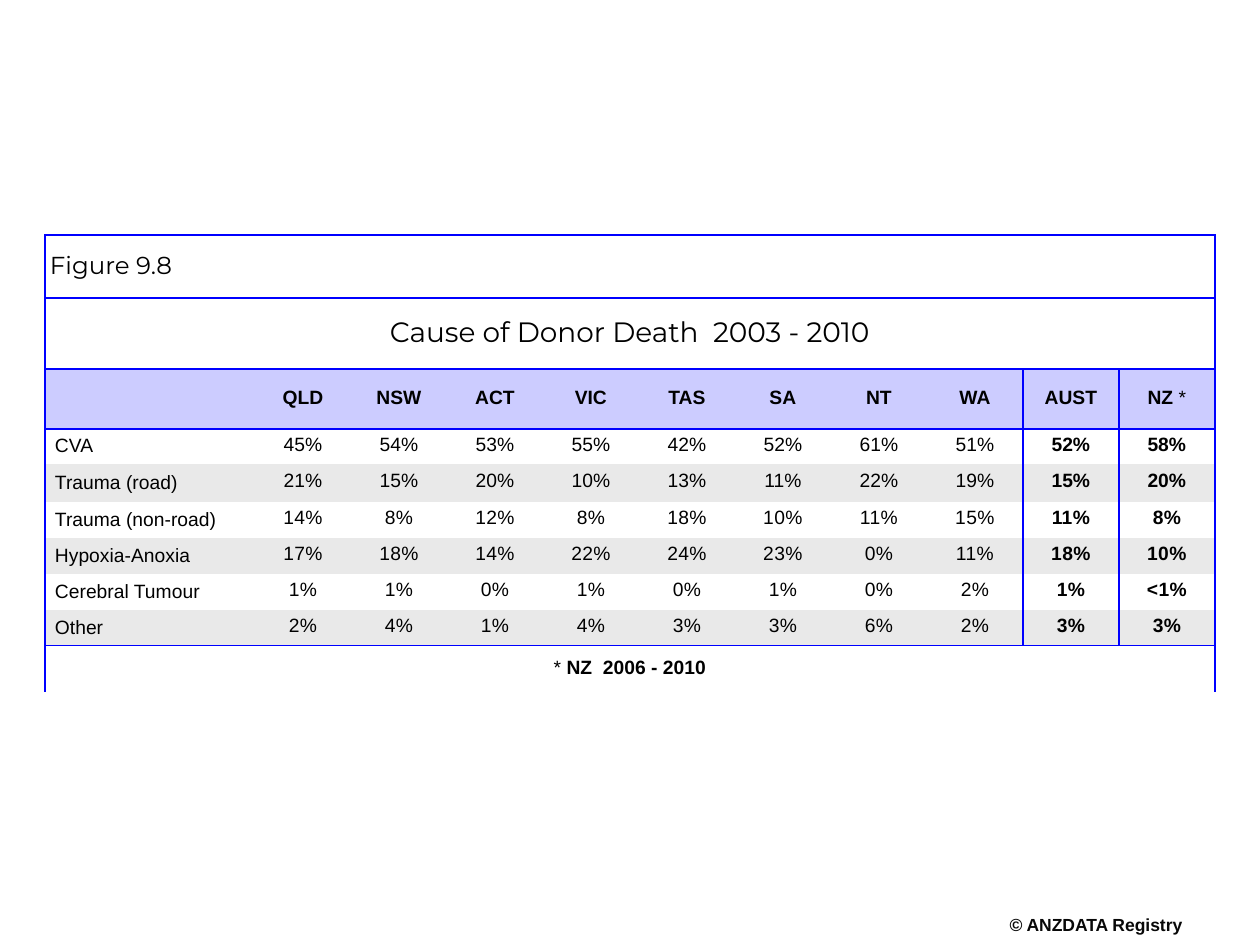
from lxml import etree
from pptx import Presentation
from pptx.dml.color import RGBColor
from pptx.enum.text import MSO_ANCHOR, PP_ALIGN
from pptx.oxml.ns import qn
from pptx.util import Pt

FIGURE = "Figure 9.8"
TITLE = "Cause of Donor Death  2003 - 2010"
REGIONS = ["QLD", "NSW", "ACT", "VIC", "TAS", "SA", "NT", "WA", "AUST", "NZ"]
CAUSES = [
    ("CVA", "45% 54% 53% 55% 42% 52% 61% 51% 52% 58%"),
    ("Trauma (road)", "21% 15% 20% 10% 13% 11% 22% 19% 15% 20%"),
    ("Trauma (non-road)", "14% 8% 12% 8% 18% 10% 11% 15% 11% 8%"),
    ("Hypoxia-Anoxia", "17% 18% 14% 22% 24% 23% 0% 11% 18% 10%"),
    ("Cerebral Tumour", "1% 1% 0% 1% 0% 1% 0% 2% 1% <1%"),
    ("Other", "2% 4% 1% 4% 3% 3% 6% 2% 3% 3%"),
]
FOOTNOTE = [("*", False), (" NZ  2006 - 2010", True)]
COPYRIGHT = "© ANZDATA Registry"

BLACK = RGBColor(0x00, 0x00, 0x00)
NEAR_BLACK = RGBColor(0x08, 0x08, 0x08)
BLUE = RGBColor(0x00, 0x00, 0xFF)
LAVENDER = RGBColor(0xCC, 0xCC, 0xFF)
GREY = RGBColor(0xE9, 0xE9, 0xE9)
LEFT, CENTER = PP_ALIGN.LEFT, PP_ALIGN.CENTER
MIDDLE = MSO_ANCHOR.MIDDLE

PX = 914400 // 126
COLUMN_WIDTHS = [210] + [96] * len(REGIONS)
ROW_HEIGHTS = [63, 71, 60, 35, 38, 36, 36, 36, 36, 46]
COLUMNS, ROWS = len(COLUMN_WIDTHS), len(ROW_HEIGHTS)
HEADER_ROW, FIRST_CAUSE, LAST_ROW = 2, 3, ROWS - 1
BANNER_ROWS = {0, 1, LAST_ROW}
ROW_RULES = {0, 1, 2, 3, LAST_ROW}
COLUMN_RULES = {0, COLUMNS - 2, COLUMNS - 1, COLUMNS}

BODY = {"name": "Arial", "size": Pt(11), "color": BLACK}
FIGURE_FONT = {"name": "Montserrat", "size": Pt(14), "color": BLACK}
TITLE_FONT = {**FIGURE_FONT, "size": Pt(16)}
COPYRIGHT_FONT = {"name": "Arial", "size": Pt(10), "color": NEAR_BLACK}


def write(frame, runs, font, align, line_spacing, tracking=0):
    paragraph = frame.paragraphs[0]
    paragraph.alignment = align
    paragraph.line_spacing = line_spacing
    for text, bold in runs:
        run = paragraph.add_run()
        run.text = text
        for key, value in {**font, "bold": bold}.items():
            if key == "color":
                run.font.color.rgb = value
            else:
                setattr(run.font, key, value)
        if tracking:
            run.font._element.set("spc", str(tracking))


def set_margins(target, margins):
    for side, margin in zip(("left", "top", "right", "bottom"), margins):
        setattr(target, f"margin_{side}", margin * PX)


def draw_borders(cell, sides):
    properties = cell._tc.get_or_add_tcPr()
    for side, ruled in sides.items():
        line = etree.SubElement(properties, qn(f"a:ln{side}"), w=str(Pt(1)))
        if ruled:
            fill = etree.SubElement(line, qn("a:solidFill"))
            etree.SubElement(fill, qn("a:srgbClr"), val=str(BLUE))
        else:
            etree.SubElement(line, qn("a:noFill"))


def fill_cell(cell, runs, font, align, line_spacing, margins, tracking=0):
    cell.vertical_anchor = MIDDLE
    set_margins(cell, margins)
    write(cell.text_frame, runs, font, align, line_spacing, tracking)


prs = Presentation()
prs.slide_width, prs.slide_height = 1260 * PX, 945 * PX
slide = prs.slides.add_slide(prs.slide_layouts[6])

credit = slide.shapes.add_textbox(1007 * PX, 917 * PX, 178 * PX, 21 * PX).text_frame
credit.word_wrap = False
set_margins(credit, (0, 0, 0, 0))
write(credit, [(COPYRIGHT, True)], COPYRIGHT_FONT, CENTER, 0.85)

table = slide.shapes.add_table(
    ROWS, COLUMNS, 45 * PX, 235 * PX, sum(COLUMN_WIDTHS) * PX, sum(ROW_HEIGHTS) * PX
).table
table.first_row = table.horz_banding = False
for column, width in zip(table.columns, COLUMN_WIDTHS):
    column.width = width * PX
for row, height in zip(table.rows, ROW_HEIGHTS):
    row.height = height * PX

for r in range(ROWS):
    banner = r in BANNER_ROWS
    column_rules = {0, COLUMNS} if banner else COLUMN_RULES
    striped = FIRST_CAUSE <= r < LAST_ROW and (r - FIRST_CAUSE) % 2
    if banner:
        table.cell(r, 0).merge(table.cell(r, COLUMNS - 1))
    for c in range(COLUMNS):
        cell = table.cell(r, c)
        right = COLUMNS if banner and c == 0 else c + 1
        draw_borders(cell, {
            "L": c in column_rules, "R": right in column_rules,
            "T": r in ROW_RULES, "B": r + 1 in ROW_RULES,
        })
        if r == HEADER_ROW or striped:
            cell.fill.solid()
            cell.fill.fore_color.rgb = LAVENDER if r == HEADER_ROW else GREY
        else:
            cell.fill.background()

fill_cell(table.cell(0, 0), [(FIGURE, False)], FIGURE_FONT, LEFT, 0.85, (5, 3, 5, 3))
fill_cell(table.cell(1, 0), [(TITLE, False)], TITLE_FONT, CENTER, 0.85, (10, 10, 10, 10))
fill_cell(table.cell(LAST_ROW, 0), FOOTNOTE, BODY, CENTER, 0.75, (5, 5, 5, 3))

for c, region in enumerate(REGIONS, 1):
    runs = [("NZ ", True), ("*", False)] if region == "NZ" else [(region, True)]
    fill_cell(table.cell(HEADER_ROW, c), runs, BODY, CENTER, 0.85, (5, 5, 5, 5))

for r, (cause, shares) in enumerate(CAUSES, FIRST_CAUSE):
    label_spacing = 0.75 if r == FIRST_CAUSE else 0.85
    tracking = 20 if r >= FIRST_CAUSE + 2 else 0
    fill_cell(table.cell(r, 0), [(cause, False)], BODY, LEFT, label_spacing, (10, 5, 5, 3))
    for c, share in enumerate(shares.split(), 1):
        total = c >= COLUMNS - 2
        fill_cell(table.cell(r, c), [(share, total)], BODY, CENTER, 0.75, (5, 5, 5, 5), tracking)

prs.save("out.pptx")
